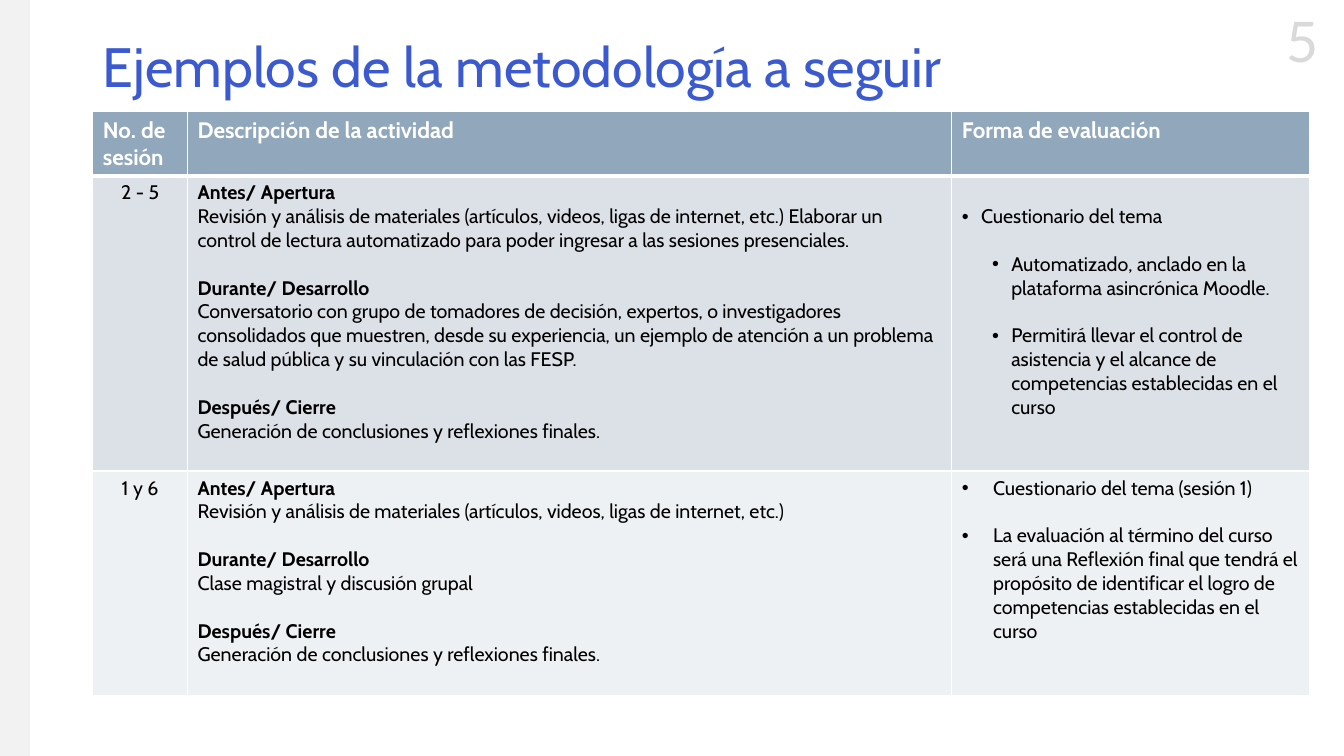
from lxml.etree import SubElement
from pptx import Presentation
from pptx.dml.color import RGBColor
from pptx.enum.shapes import MSO_SHAPE
from pptx.enum.text import MSO_ANCHOR, PP_ALIGN
from pptx.oxml.ns import qn
from pptx.util import Inches, Pt

COLORS = {
    "title": "3C5ACF", "number": "D9D9D9", "band": "F2F2F2", "header": "91A7BC",
    "sessions_2_5": "DCE1E7", "sessions_1_6": "EEF1F3", "white": "FFFFFF", "text": "000000",
}
LINE = 17  # points taken by one line of 14 point text


def color(name):
    return RGBColor.from_string(COLORS[name])


def style(paragraph, size, color_name, bold=False, font_name="Cabin"):
    font = paragraph.font
    font.name, font.size, font.bold = font_name, Pt(size), bold
    font.color.rgb = color(color_name)
    for run in paragraph.runs:
        run.font.name, run.font.size, run.font.bold = font_name, Pt(size), bold
        run.font.color.rgb = color(color_name)


presentation = Presentation()
presentation.slide_width, presentation.slide_height = Inches(13.33), Inches(7.5)
slide = presentation.slides.add_slide(presentation.slide_layouts[5])

# Side band and slide number
band = slide.shapes.add_shape(MSO_SHAPE.RECTANGLE, 0, 0, Inches(0.3), presentation.slide_height)
band.shadow.inherit = False
band.fill.solid()
band.fill.fore_color.rgb = color("band")
band.line.fill.background()

number = slide.shapes.add_textbox(Inches(12.54), Inches(0.02), Inches(0.75), Inches(0.77))
number.text_frame.text = "5"
number.text_frame.paragraphs[0].alignment = PP_ALIGN.CENTER
style(number.text_frame.paragraphs[0], 40, "number", font_name="Lato")

# Title
title = slide.shapes.title
title.left, title.top, title.width, title.height = (Inches(x) for x in (0.92, 0.4, 11.5, 0.58))
title.text_frame.text = "Ejemplos de la metodología a seguir"
title.text_frame.vertical_anchor = MSO_ANCHOR.MIDDLE
title_line = title.text_frame.paragraphs[0]
title_line.alignment, title_line.line_spacing = PP_ALIGN.LEFT, 0.9
style(title_line, 39.6, "title")

# Table: activities as (stage, description), evaluations as (indent, hanging, text)
headers = ["No. de sesión", "Descripción de la actividad", "Forma de evaluación"]
closing = ("Después/ Cierre", "Generación de conclusiones y reflexiones finales.")
sessions = [
    ("2 - 5", "sessions_2_5", [
        ("Antes/ Apertura", "Revisión y análisis de materiales (artículos, videos, ligas de internet, etc.) "
         "Elaborar un control de lectura automatizado para poder ingresar a las sesiones presenciales."),
        ("Durante/ Desarrollo", "Conversatorio con grupo de tomadores de decisión, expertos, o investigadores "
         "consolidados que muestren, desde su experiencia, un ejemplo de atención a un problema de salud "
         "pública y su vinculación con las FESP."),
        closing,
    ], [
        (0.19, 0.19, "Cuestionario del tema"),
        (0.49, 0.19, "Automatizado, anclado en la plataforma asincrónica Moodle."),
        (0.49, 0.19, "Permitirá llevar el control de asistencia y el alcance de competencias "
         "establecidas en el curso"),
    ]),
    ("1 y 6", "sessions_1_6", [
        ("Antes/ Apertura", "Revisión y análisis de materiales (artículos, videos, ligas de internet, etc.)"),
        ("Durante/ Desarrollo", "Clase magistral y discusión grupal"),
        closing,
    ], [
        (0.31, 0.31, "Cuestionario del tema (sesión 1)"),
        (0.31, 0.31, "La evaluación al término del curso será una Reflexión final que tendrá el "
         "propósito de identificar el logro de competencias establecidas en el curso"),
    ]),
]
column_widths, row_heights = [0.94, 7.58, 3.55], [0.63, 2.93, 2.23]
table = slide.shapes.add_table(
    len(row_heights), len(column_widths), Inches(0.92), Inches(1.11),
    Inches(sum(column_widths)), Inches(sum(row_heights))).table
for column, width in zip(table.columns, column_widths):
    column.width = Inches(width)
for row, height in zip(table.rows, row_heights):
    row.height = Inches(height)

# White cell borders, thicker under the header, and row fills
row_fills = ["header"] + [session[1] for session in sessions]
for row_index, fill_name in enumerate(row_fills):
    for cell in table.rows[row_index].cells:
        properties = cell._tc.get_or_add_tcPr()
        for side in ("lnL", "lnR", "lnT", "lnB"):
            under_header = (row_index, side) in ((0, "lnB"), (1, "lnT"))
            border = SubElement(properties, qn(f"a:{side}"), w=str(Pt(3 if under_header else 1)))
            SubElement(SubElement(border, qn("a:solidFill")), qn("a:srgbClr"), val=COLORS["white"])
        cell.fill.solid()
        cell.fill.fore_color.rgb = color(fill_name)

for column_index, header in enumerate(headers):
    cell = table.cell(0, column_index)
    cell.text_frame.text = header
    style(cell.text_frame.paragraphs[0], 16, "white", bold=True)

for row_index, (session, _, activities, evaluations) in enumerate(sessions, start=1):
    session_cell, activity_cell, evaluation_cell = table.rows[row_index].cells

    session_cell.text_frame.text = session
    session_cell.text_frame.paragraphs[0].alignment = PP_ALIGN.CENTER
    style(session_cell.text_frame.paragraphs[0], 14, "text")

    activity_cell.text_frame.text = "\n".join(line for activity in activities for line in activity)
    for index, paragraph in enumerate(activity_cell.text_frame.paragraphs):
        is_stage = index % 2 == 0
        if is_stage and index:
            paragraph.space_before = Pt(LINE)
        style(paragraph, 14, "text", bold=is_stage)

    evaluation_cell.text_frame.text = "\n".join(text for _, _, text in evaluations)
    for index, paragraph in enumerate(evaluation_cell.text_frame.paragraphs):
        indent, hanging, _ = evaluations[index]
        properties = paragraph._p.get_or_add_pPr()
        properties.set("marL", str(Inches(indent)))
        properties.set("indent", str(-Inches(hanging)))
        SubElement(properties, qn("a:buFont"), typeface="Arial")
        SubElement(properties, qn("a:buChar"), char="•")
        if index:
            paragraph.space_before = Pt(LINE)
        style(paragraph, 14, "text")

# The first evaluation starts one line lower
table.cell(1, 2).margin_top = Inches(0.05) + Pt(LINE)

presentation.save("out.pptx")
